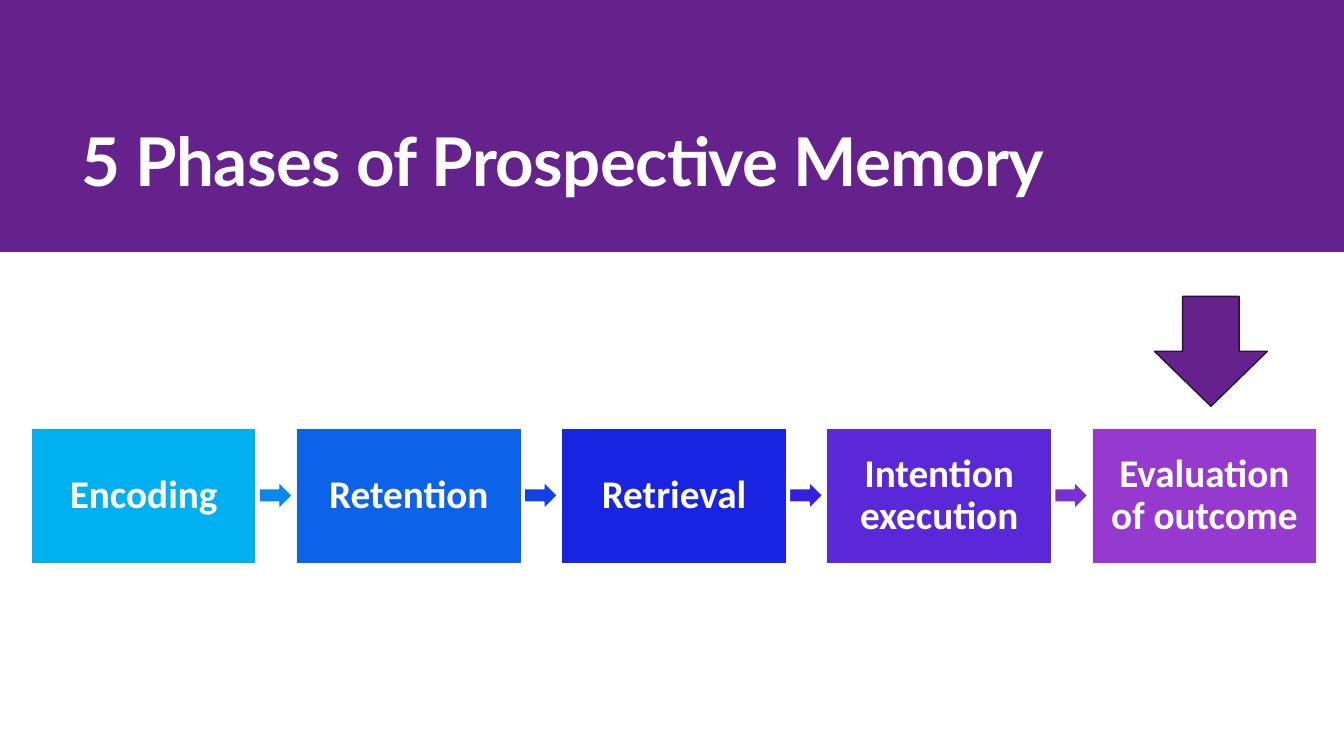
from dataclasses import dataclass

from pptx import Presentation
from pptx.dml.color import RGBColor
from pptx.enum.shapes import MSO_SHAPE
from pptx.enum.text import MSO_ANCHOR, PP_ALIGN
from pptx.shapes.autoshape import Shape
from pptx.slide import Slide
from pptx.util import Emu, Pt

RECTANGLE = MSO_SHAPE.RECTANGLE
RIGHT_ARROW = MSO_SHAPE.RIGHT_ARROW
DOWN_ARROW = MSO_SHAPE.DOWN_ARROW
MIDDLE = MSO_ANCHOR.MIDDLE
BOTTOM = MSO_ANCHOR.BOTTOM
LEFT = PP_ALIGN.LEFT
CENTER = PP_ALIGN.CENTER

EMU_PER_PX = 9144
BLANK_LAYOUT = 6


@dataclass(frozen=True)
class Theme:
    purple: str = "65228D"
    dark_purple: str = "2C0F3E"
    white: str = "FFFFFF"
    title_font: str = "Lato"
    phase_font: str = "Calibri"
    title_size: int = 48
    phase_size: int = 28
    title_spacing: int = -40
    line_spacing: float = 0.9
    outline: int = 1


@dataclass(frozen=True)
class Box:
    left: int
    top: int
    width: int
    height: int

    def shifted(self, distance: int) -> "Box":
        return Box(self.left + distance, self.top, self.width, self.height)


@dataclass(frozen=True)
class Phase:
    name: str
    color: str
    arrow_color: str | None = None


THEME = Theme()
SLIDE_BOX = Box(0, 0, 1333, 750)
HEADER_BOX = Box(0, 0, 1333, 250)
TITLE_BOX = Box(71, 40, 1154, 164)
FIRST_PHASE_BOX = Box(31, 425, 223, 134)
FIRST_ARROW_BOX = Box(257, 478, 33, 27)
MARKER_BOX = Box(1145, 294, 112, 109)
PHASE_PITCH = 263
PHASE_INSET = 17

PHASES = (
    Phase("Encoding", "00B0F0", "0688ED"),
    Phase("Retention", "0C63EA", "1242E6"),
    Phase("Retrieval", "1924E3", "3620DF"),
    Phase("Intention execution", "5A28D9", "7B30D4"),
    Phase("Evaluation of outcome", "9639CE"),
)


def px(length: int) -> Emu:
    return Emu(length * EMU_PER_PX)


def place(box: Box) -> tuple[Emu, Emu, Emu, Emu]:
    return px(box.left), px(box.top), px(box.width), px(box.height)


def add_filled_shape(
    slide: Slide, kind: MSO_SHAPE, box: Box, fill: str, line: str | None = None
) -> Shape:
    shape = slide.shapes.add_shape(kind, *place(box))
    shape.shadow.inherit = False
    shape.fill.solid()
    shape.fill.fore_color.rgb = RGBColor.from_string(fill)
    if line is None:
        shape.line.fill.background()
    else:
        shape.line.color.rgb = RGBColor.from_string(line)
        shape.line.width = Pt(THEME.outline)
    return shape


def write_text(
    shape: Shape, text: str, font: str, size: int, alignment: PP_ALIGN, anchor: MSO_ANCHOR
) -> None:
    frame = shape.text_frame
    frame.word_wrap = True
    frame.vertical_anchor = anchor
    paragraph = frame.paragraphs[0]
    paragraph.text = text
    paragraph.alignment = alignment
    paragraph.line_spacing = THEME.line_spacing
    paragraph.font.name = font
    paragraph.font.size = Pt(size)
    paragraph.font.bold = True
    paragraph.font.color.rgb = RGBColor.from_string(THEME.white)


def add_title(slide: Slide, text: str) -> None:
    title = slide.shapes.add_textbox(*place(TITLE_BOX))
    write_text(title, text, THEME.title_font, THEME.title_size, LEFT, BOTTOM)
    run = title.text_frame.paragraphs[0].runs[0]
    run.font._element.set("spc", str(THEME.title_spacing))


def add_phase(slide: Slide, phase: Phase, distance: int) -> None:
    box = FIRST_PHASE_BOX.shifted(distance)
    shape = add_filled_shape(slide, RECTANGLE, box, phase.color, THEME.white)
    frame = shape.text_frame
    frame.margin_left = frame.margin_right = px(PHASE_INSET)
    frame.margin_top = frame.margin_bottom = px(PHASE_INSET)
    write_text(shape, phase.name, THEME.phase_font, THEME.phase_size, CENTER, MIDDLE)
    if phase.arrow_color is not None:
        arrow_box = FIRST_ARROW_BOX.shifted(distance)
        add_filled_shape(slide, RIGHT_ARROW, arrow_box, phase.arrow_color, THEME.white)


def main() -> None:
    presentation = Presentation()
    presentation.slide_width = px(SLIDE_BOX.width)
    presentation.slide_height = px(SLIDE_BOX.height)
    slide = presentation.slides.add_slide(presentation.slide_layouts[BLANK_LAYOUT])
    add_filled_shape(slide, RECTANGLE, HEADER_BOX, THEME.purple)
    add_title(slide, "5 Phases of Prospective Memory")
    for index, phase in enumerate(PHASES):
        add_phase(slide, phase, index * PHASE_PITCH)
    add_filled_shape(slide, DOWN_ARROW, MARKER_BOX, THEME.purple, THEME.dark_purple)
    presentation.save("out.pptx")


if __name__ == "__main__":
    main()
